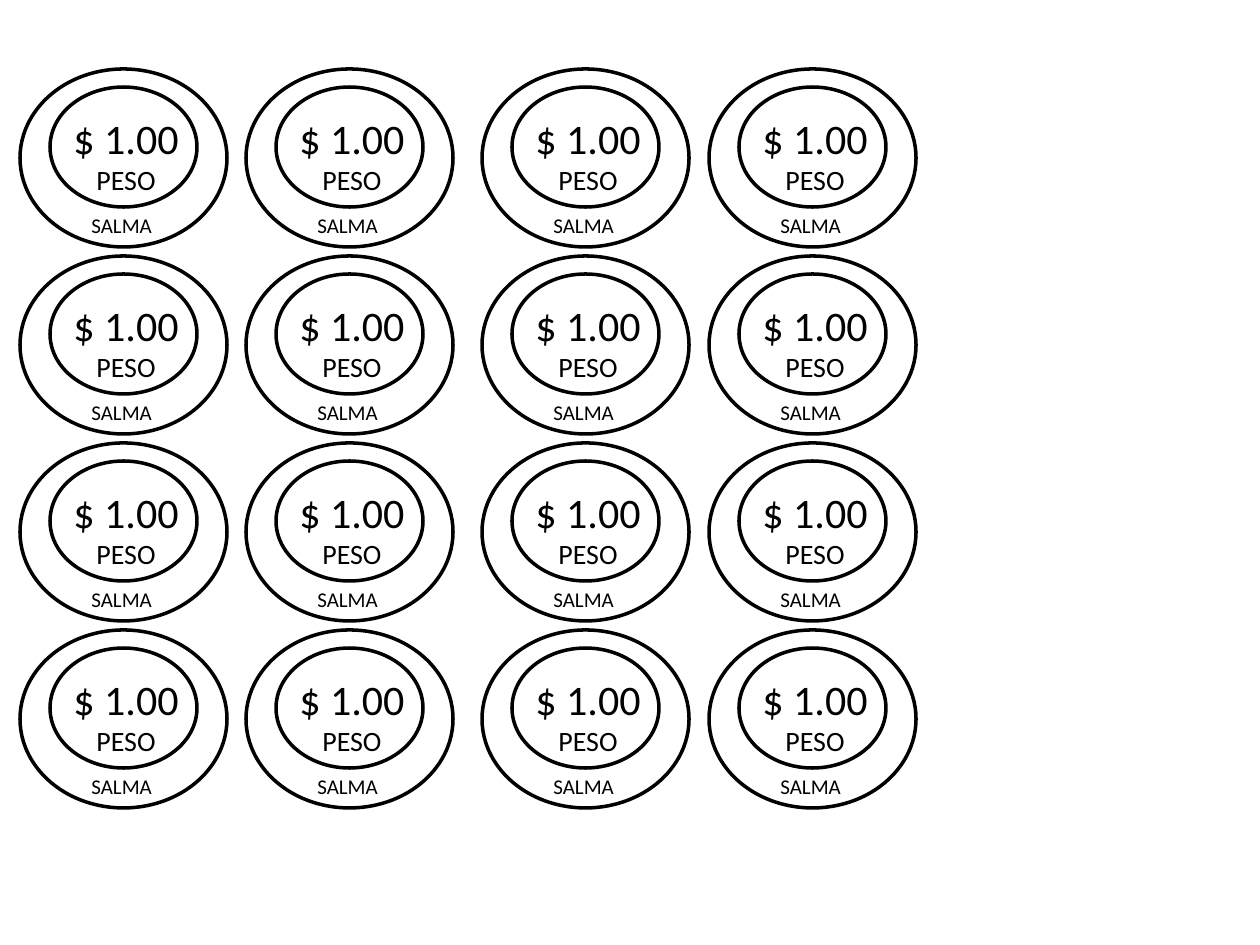
"""Build a sheet of one-peso play coins in a four by four grid."""
from dataclasses import dataclass
from itertools import product

from pptx import Presentation
from pptx.dml.color import RGBColor
from pptx.enum.shapes import MSO_SHAPE
from pptx.enum.text import MSO_AUTO_SIZE, PP_ALIGN
from pptx.shapes.shapetree import GroupShapes, SlideShapes
from pptx.util import Pt

OVAL = MSO_SHAPE.OVAL
GROW = MSO_AUTO_SIZE.SHAPE_TO_FIT_TEXT
CENTER, LEFT = PP_ALIGN.CENTER, PP_ALIGN.LEFT
EMU_PER_PX = 914400 / 126


@dataclass(frozen=True)
class Theme:
    ink: RGBColor = RGBColor(0, 0, 0)
    font: str = "Calibri"
    value_size: int = 24
    unit_size: int = 16
    owner_size: int = 12
    ring_width: int = 2


@dataclass(frozen=True)
class Box:
    left: int
    top: int
    width: int
    height: int

    def emu(self, x: int, y: int) -> list[int]:
        lengths = (self.left + x, self.top + y, self.width, self.height)
        return [round(length * EMU_PER_PX) for length in lengths]


@dataclass(frozen=True)
class Label:
    box: Box
    lines: tuple[tuple[str, int], ...]
    align: PP_ALIGN


THEME = Theme()
COLUMNS = (20, 246, 482, 709)
ROWS = range(69, 69 + 4 * 187, 187)
RINGS = (Box(0, 0, 207, 178), Box(30, 18, 147, 120))
AMOUNT = Label(
    Box(40, 37, 132, 97),
    (("$ 1.00", THEME.value_size), ("PESO", THEME.unit_size)),
    CENTER,
)
OWNER = Label(Box(59, 137, 88, 38), (("SALMA", THEME.owner_size),), LEFT)


def draw_ring(shapes: GroupShapes, box: Box, x: int, y: int) -> None:
    """Draw one unfilled oval of a coin."""
    ring = shapes.add_shape(OVAL, *box.emu(x, y))
    ring.shadow.inherit = False
    ring.fill.background()
    ring.line.color.rgb = THEME.ink
    ring.line.width = Pt(THEME.ring_width)


def draw_label(shapes: GroupShapes | SlideShapes, label: Label, x: int, y: int) -> None:
    """Write the lines of a label at its place on a coin."""
    frame = shapes.add_textbox(*label.box.emu(x, y)).text_frame
    for name, value in {"word_wrap": False, "auto_size": GROW}.items():
        setattr(frame, name, value)
    frame.text = "\n".join(words for words, _ in label.lines)
    for paragraph, (_, size) in zip(frame.paragraphs, label.lines):
        paragraph.alignment = label.align
        font = paragraph.runs[0].font
        for name, value in {"name": THEME.font, "size": Pt(size)}.items():
            setattr(font, name, value)
        font.color.rgb = THEME.ink


def draw_coin(shapes: SlideShapes, x: int, y: int) -> None:
    """Draw a coin with its rings, amount and owner."""
    face = shapes.add_group_shape().shapes
    for ring in RINGS:
        draw_ring(face, ring, x, y)
    draw_label(face, AMOUNT, x, y)
    draw_label(shapes, OWNER, x, y)


def main() -> None:
    """Lay out the coins and save the sheet."""
    deck = Presentation()
    deck.slide_width, deck.slide_height = Box(0, 0, 1260, 945).emu(0, 0)[2:]
    sheet = deck.slides.add_slide(deck.slide_layouts[6])
    for x, y in product(COLUMNS, ROWS):
        draw_coin(sheet.shapes, x, y)
    deck.save("out.pptx")


if __name__ == "__main__":
    main()
